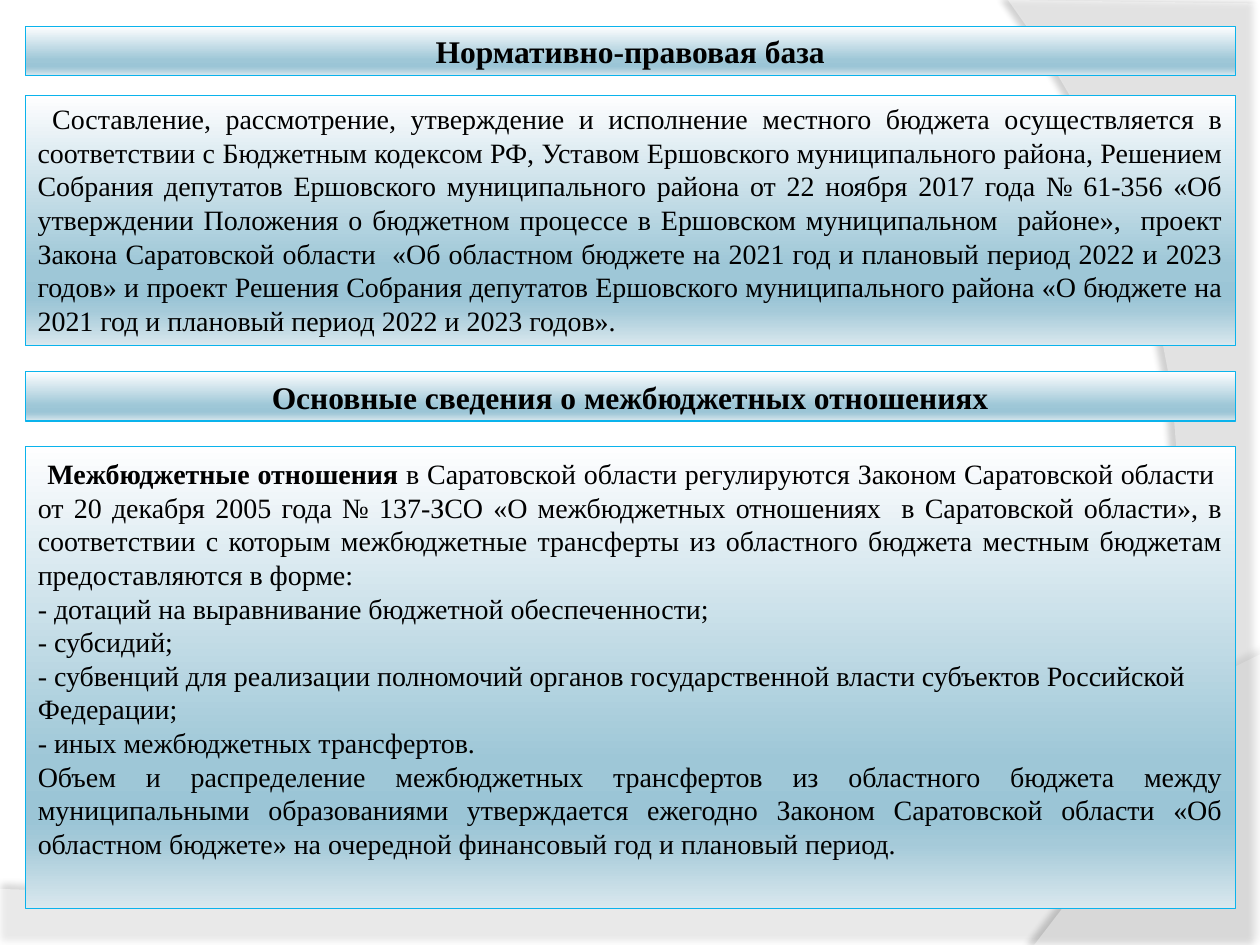
from lxml import etree
from pptx import Presentation
from pptx.dml.color import RGBColor
from pptx.enum.shapes import MSO_SHAPE
from pptx.enum.text import MSO_ANCHOR, MSO_AUTO_SIZE, PP_ALIGN
from pptx.oxml.ns import qn
from pptx.util import Pt

RECT = MSO_SHAPE.RECTANGLE
TOP, MIDDLE = MSO_ANCHOR.TOP, MSO_ANCHOR.MIDDLE
LEFT, CENTER, JUSTIFY = PP_ALIGN.LEFT, PP_ALIGN.CENTER, PP_ALIGN.JUSTIFY
NO_FIT = MSO_AUTO_SIZE.NONE

SERIF = "Times New Roman"
W, H = 720, 540
BOX_LEFT, BOX_W = 14.4, 691.5
STOPS = [(0, "FEFEFF"), (68, "9EC7D7"), (81, "9BC5D6"), (86, "A5CAD9"), (100, "DAE8EE")]

LEGAL_TITLE = "Нормативно-правовая база"
LEGAL_TEXT = (
    " Составление, рассмотрение, утверждение и исполнение местного бюджета осуществляется "
    "в соответствии с Бюджетным кодексом РФ, Уставом Ершовского муниципального района, "
    "Решением Собрания депутатов Ершовского муниципального района от 22 ноября 2017 года "
    "№ 61-356 «Об утверждении Положения о бюджетном процессе в Ершовском муниципальном  "
    "районе»,  проект Закона Саратовской области  «Об областном бюджете на 2021 год и "
    "плановый период 2022 и 2023 годов» и проект Решения Собрания депутатов Ершовского "
    "муниципального района «О бюджете на 2021 год и плановый период 2022 и 2023 годов»."
)
RELATIONS_TITLE = "Основные сведения о межбюджетных отношениях"
RELATIONS_INTRO = (
    " в Саратовской области регулируются Законом Саратовской области  от 20 декабря 2005 "
    "года № 137-ЗСО «О межбюджетных отношениях  в Саратовской области», в соответствии с "
    "которым межбюджетные трансферты из областного бюджета местным бюджетам "
    "предоставляются в форме:"
)
TRANSFERS = [
    "- дотаций на выравнивание бюджетной обеспеченности;",
    "- субсидий;",
    "- субвенций для реализации полномочий органов государственной власти субъектов "
    "Российской Федерации;",
    "- иных межбюджетных трансфертов.",
]
RELATIONS_END = (
    "Объем и распределение межбюджетных трансфертов из областного бюджета между "
    "муниципальными образованиями утверждается ежегодно Законом Саратовской области "
    "«Об областном бюджете» на очередной финансовый год и плановый период."
)


def run(text, size=16, bold=False, font=SERIF):
    return text, size, bold, font


def heading(text):
    return [(CENTER, [run(text, 18, True)])]


RELATIONS = [
    (JUSTIFY, [run(" ", 18, font="Arial"), run("Межбюджетные отношения", bold=True),
               run(RELATIONS_INTRO)]),
    *[(LEFT, [run(t)]) for t in TRANSFERS],
    (JUSTIFY, [run(RELATIONS_END)]),
]


def rgb(value):
    return RGBColor.from_string(value)


def add_color(parent, value, alpha=100):
    clr = etree.SubElement(parent, qn("a:srgbClr"), val=value)
    if alpha < 100:
        etree.SubElement(clr, qn("a:alpha"), val=str(alpha * 1000))


def bezier(p0, p1, p2, p3, n=24):
    return [tuple((1 - t) ** 3 * a + 3 * t * (1 - t) ** 2 * b + 3 * t * t * (1 - t) * c + t ** 3 * d
                  for a, b, c, d in zip(p0, p1, p2, p3))
            for t in (i / n for i in range(1, n + 1))]


def add_wave(s, points, opacity, shade, blur, dist, angle):
    fb = s.shapes.build_freeform(*points[0], scale=Pt(1))
    fb.add_line_segments(points[1:], close=True)
    sp = fb.convert_to_shape()
    sp.fill.solid()
    sp.fill.fore_color.rgb = rgb("FFFFFF")
    clr = sp.element.spPr.find(qn("a:solidFill"))[0]
    etree.SubElement(clr, qn("a:alpha"), val=str(opacity * 1000))
    sp.line.fill.background()
    sp.shadow.inherit = False
    effects = sp.element.spPr.find(qn("a:effectLst"))
    shadow = etree.SubElement(effects, qn("a:outerShdw"), blurRad=str(Pt(blur)),
                              dist=str(Pt(dist)), dir=str(angle * 60000), rotWithShape="0")
    add_color(shadow, "000000", shade)
    s.shapes.title.element.addprevious(sp.element)


def style_box(sp, top, height):
    sp.left, sp.top, sp.width, sp.height = Pt(BOX_LEFT), Pt(top), Pt(BOX_W), Pt(height)
    sp.fill.gradient()
    sp.fill.gradient_angle = 270
    stops = sp.element.spPr.find(qn("a:gradFill")).find(qn("a:gsLst"))
    stops.clear()
    for pos, value in STOPS:
        add_color(etree.SubElement(stops, qn("a:gs"), pos=str(pos * 1000)), value)
    sp.line.color.rgb = rgb("0AB3EC")
    sp.line.width = Pt(0.75)
    sp.shadow.inherit = False


def write(sp, paragraphs, anchor, inset):
    tf = sp.text_frame
    tf.word_wrap, tf.auto_size, tf.vertical_anchor = True, NO_FIT, anchor
    tf.margin_left = tf.margin_right = Pt(inset)
    tf.margin_top = tf.margin_bottom = Pt(3.6)
    for i, (align, runs) in enumerate(paragraphs):
        p = tf.add_paragraph() if i else tf.paragraphs[0]
        p.alignment, p.line_spacing = align, 1.0
        p.space_before = p.space_after = Pt(0)
        pPr = p._p.get_or_add_pPr()
        pPr.set("marL", "0")
        pPr.set("indent", "0")
        etree.SubElement(pPr, qn("a:buNone"))
        for text, size, bold, font in runs:
            r = p.add_run()
            r.text = text
            r.font.size, r.font.bold, r.font.name = Pt(size), bold, font
            r.font.color.rgb = rgb("000000")


def main():
    prs = Presentation()
    prs.slide_width, prs.slide_height = Pt(W), Pt(H)
    s = prs.slides.add_slide(prs.slide_layouts[1])

    bottom_wave = [(0, 507.5), (0, H), (W, H), (W, 374.5)]
    bottom_wave += bezier((W, 374.5), (402.5, 525), (281.5, 517.5), (0, 507.5))
    side_wave = [(W, 1.5), (W, H), (591, H)]
    side_wave += bezier((591, H), (673, 445.5), (733, 216), (576, 0))
    add_wave(s, bottom_wave, 45, 35, 4, 3.5, 270)
    add_wave(s, side_wave, 40, 45, 4, 4, 180)

    def new_box():
        return s.shapes.add_shape(RECT, 0, 0, 0, 0)

    boxes = [
        (s.shapes.title, 15, 28.2, heading(LEGAL_TITLE), MIDDLE, 3.6),
        (new_box(), 54.6, 143, [(JUSTIFY, [run(LEGAL_TEXT)])], TOP, 7.2),
        (new_box(), 212.4, 28.2, heading(RELATIONS_TITLE), MIDDLE, 3.6),
        (s.placeholders[1], 255, 264.2, RELATIONS, TOP, 7.2),
    ]
    for sp, top, height, paragraphs, anchor, inset in boxes:
        style_box(sp, top, height)
        write(sp, paragraphs, anchor, inset)

    prs.save("out.pptx")


if __name__ == "__main__":
    main()
